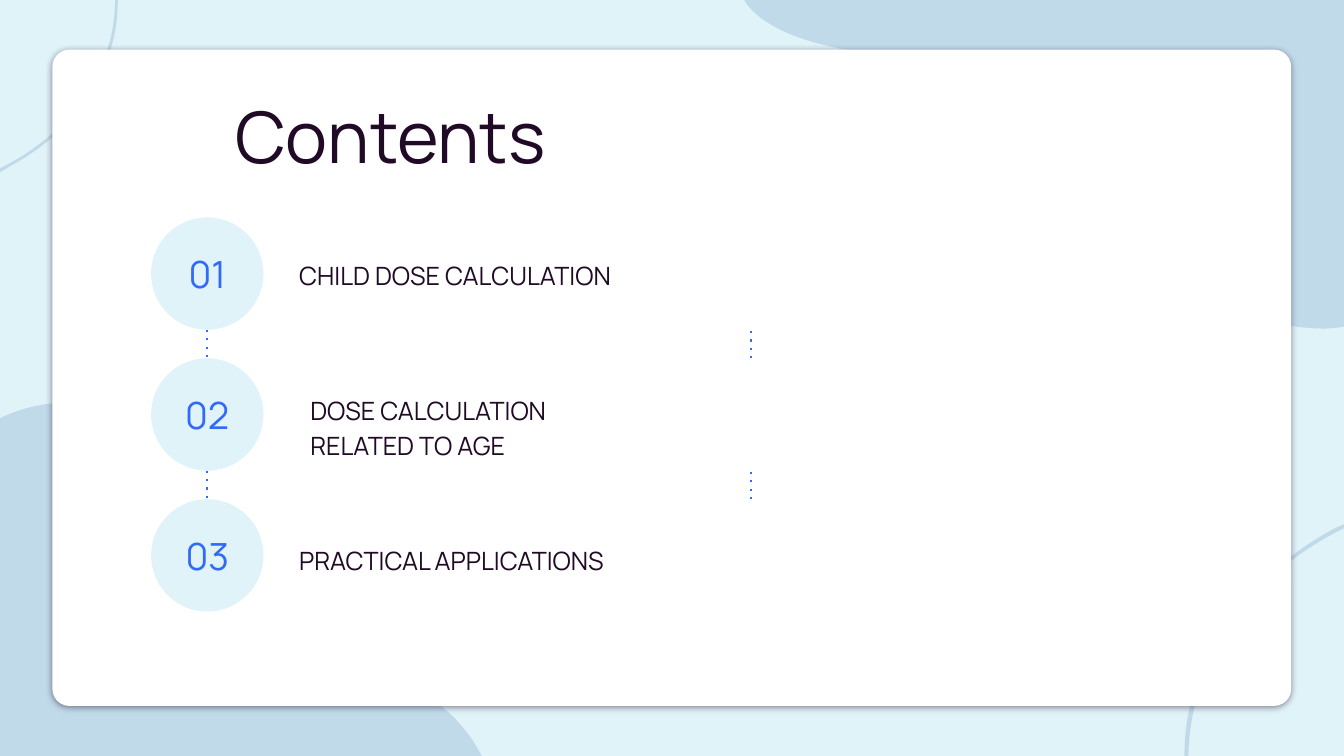
from lxml import etree
from pptx import Presentation
from pptx.dml.color import RGBColor
from pptx.enum.dml import MSO_LINE
from pptx.enum.shapes import MSO_CONNECTOR, MSO_SHAPE
from pptx.enum.text import MSO_ANCHOR, MSO_AUTO_SIZE, PP_ALIGN
from pptx.oxml.ns import qn
from pptx.util import Cm, Pt

STRAIGHT, DOT = MSO_CONNECTOR.STRAIGHT, MSO_LINE.ROUND_DOT
CARD, CIRCLE = MSO_SHAPE.ROUNDED_RECTANGLE, MSO_SHAPE.OVAL
TOP, MIDDLE = MSO_ANCHOR.TOP, MSO_ANCHOR.MIDDLE
LEFT, CENTER = PP_ALIGN.LEFT, PP_ALIGN.CENTER

W, H = 33.87, 19.05
FONT, INK, BLUE, PALE, WAVE = "Manrope", "210A26", "3169F8", "DFF3F8", "A0BFDB"
INSET = 0.33
DIAMETER, PITCH = 2.83, 3.55

# Each outline is a list of points (x, y) and Bezier curves (x1, y1, x2, y2, x, y), in cm
WAVES = [
    [(29.95, H), (29.97, 17.83, 30.38, 16.59, 31.12, 15.6),
     (31.83, 14.6, 32.79, 13.84, W, 13.31), (W, 13.21),
     (33.76, 13.26, 33.63, 13.31, 33.5, 13.39),
     (32.64, 13.87, 31.83, 14.53, 31.19, 15.32),
     (30.56, 16.15, 30.1, 17.09, 29.92, 18.14),
     (29.87, 18.44, 29.85, 18.75, 29.85, H)],
    [(1.52, 10.16), (0.74, 10.16, 0, 10.54, 0, 10.54), (0, H), (12.14, H),
     (10.59, 15.98, 5.79, 16.56, 3.78, 15.95),
     (1.8, 15.37, 3.99, 12.42, 2.92, 10.85),
     (2.54, 10.31, 2.03, 10.16, 1.52, 10.16)],
    [(18.75, 0), (19.3, 0.89, 21.13, 1.47, 24.1, 1.47),
     (24.21, 1.47, 24.33, 1.47, 24.43, 1.47),
     (24.49, 1.47, 24.51, 1.47, 24.56, 1.47),
     (29.01, 1.47, 27.15, 5.41, 30.45, 7.47),
     (31.34, 8.03, 32.49, 8.28, 33.38, 8.28),
     (33.55, 8.28, 33.71, 8.26, W, 8.23), (W, 0)],
    [(2.9, 0), (2.9, 0.91, 2.59, 1.83, 2.06, 2.57),
     (1.52, 3.28, 0.79, 3.86, 0, 4.24), (0, 4.34),
     (0.1, 4.29, 0.18, 4.24, 0.25, 4.19),
     (0.91, 3.84, 1.52, 3.35, 1.98, 2.77),
     (2.46, 2.16, 2.79, 1.45, 2.92, 0.69),
     (2.95, 0.46, 2.97, 0.23, 2.97, 0)],
]

# Label text, its offset from the circle's corner, and its width
ITEMS = [
    ("CHILD DOSE CALCULATION", 3.4, 0.4, 9.17),
    ("DOSE CALCULATION RELATED TO AGE", 3.68, 0.69, 9.17),
    ("PRACTICAL APPLICATIONS", 3.4, 0.49, 10.29),
]


def rgb(color):
    return RGBColor.from_string(color)


def paint(shape, color):
    shape.shadow.inherit = False
    shape.fill.solid()
    shape.fill.fore_color.rgb = rgb(color)
    shape.line.fill.background()


def write(shape, text, size, color, align, anchor, spacing=1.0, bottom=INSET):
    tf = shape.text_frame
    frame = dict(word_wrap=True, auto_size=MSO_AUTO_SIZE.NONE, vertical_anchor=anchor,
                 margin_left=Cm(INSET), margin_top=Cm(INSET),
                 margin_right=Cm(INSET), margin_bottom=Cm(bottom))
    for name, value in frame.items():
        setattr(tf, name, value)
    p = tf.paragraphs[0]
    p.alignment, p.line_spacing = align, spacing
    r = p.add_run()
    r.text = text
    for name, value in dict(name=FONT, size=Pt(size), bold=False).items():
        setattr(r.font, name, value)
    r.font.color.rgb = rgb(color)


def bend(wave, outline):
    """Turn the straight sides that stand for curves into Bezier curves."""
    sides = list(wave._element.iter(qn("a:lnTo")))
    for side, segment in zip(sides, outline[1:]):
        if len(segment) == 2:
            continue
        curve = etree.Element(qn("a:cubicBezTo"))
        for x, y in zip(segment[::2], segment[1::2]):
            etree.SubElement(curve, qn("a:pt"), x=str(Cm(x) - wave.left),
                             y=str(Cm(y) - wave.top))
        side.getparent().replace(side, curve)


def add_wave(s, outline):
    first, *rest = [(Cm(segment[-2]), Cm(segment[-1])) for segment in outline]
    builder = s.shapes.build_freeform(*first)
    builder.add_line_segments(rest, close=True)
    wave = builder.convert_to_shape()
    bend(wave, outline)
    paint(wave, WAVE)
    color = wave._element.spPr.find(".//" + qn("a:srgbClr"))
    etree.SubElement(color, qn("a:alpha"), val="48000")


def add_card(s, x, y, w, h):
    card = s.shapes.add_shape(CARD, Cm(x), Cm(y), Cm(w), Cm(h))
    card.adjustments[0] = 0.026
    paint(card, "FFFFFF")
    effects = card._element.spPr.find(qn("a:effectLst"))
    shadow = etree.SubElement(effects, qn("a:outerShdw"), blurRad=str(Pt(4.5)),
                              dist=str(Pt(1.5)), dir="5400000", algn="bl", rotWithShape="0")
    color = etree.SubElement(shadow, qn("a:srgbClr"), val=INK)
    etree.SubElement(color, qn("a:alpha"), val="50000")


def add_title(s, x, y, w, h):
    title = s.shapes.title
    title.left, title.top, title.width, title.height = Cm(x), Cm(y), Cm(w), Cm(h)
    write(title, "Contents", 50.7, INK, CENTER, TOP, 1.15)
    s.shapes._spTree.append(title._element)  # in front of the card


def add_dots(s, x, y1, y2):
    line = s.shapes.add_connector(STRAIGHT, Cm(x), Cm(y1), Cm(x), Cm(y2))
    line.line.color.rgb = rgb(BLUE)
    line.line.width, line.line.dash_style = Pt(1.5), DOT
    line._element.spPr.find(".//" + qn("a:prstDash")).set("val", "dot")
    etree.SubElement(line._element.spPr, qn("a:effectLst"))


def add_item(s, x, y, number, text, dx, dy, width):
    label = s.shapes.add_textbox(Cm(x + dx), Cm(y + dy), Cm(width), Cm(DIAMETER))
    write(label, text, 18, INK, LEFT, MIDDLE, 1.15, bottom=1.15)
    circle = s.shapes.add_shape(CIRCLE, Cm(x), Cm(y), Cm(DIAMETER), Cm(DIAMETER))
    paint(circle, PALE)
    write(circle, f"{number:02d}", 26.7, BLUE, CENTER, MIDDLE)


def add_contents(s, x, y):
    """Place the numbered items in a column, with dotted links in two columns."""
    for i, item in enumerate(ITEMS):
        add_item(s, x, y + i * PITCH, i + 1, *item)
    gaps = [(y + i * PITCH + DIAMETER, y + (i + 1) * PITCH) for i in range(len(ITEMS) - 1)]
    for top, bottom in gaps:
        add_dots(s, x + DIAMETER / 2, top, bottom)
    for top, bottom in gaps:
        add_dots(s, x + 15.11, bottom, top)


def main():
    prs = Presentation()
    prs.slide_width, prs.slide_height = Cm(W), Cm(H)
    s = prs.slides.add_slide(prs.slide_layouts[5])
    s.background.fill.solid()
    s.background.fill.fore_color.rgb = rgb(PALE)
    for outline in WAVES:
        add_wave(s, outline)
    add_card(s, 1.32, 1.25, 31.22, 16.54)
    add_title(s, -4.45, 1.68, 28.58, 2.64)
    add_contents(s, 3.81, 5.48)
    prs.save("out.pptx")


if __name__ == "__main__":
    main()
